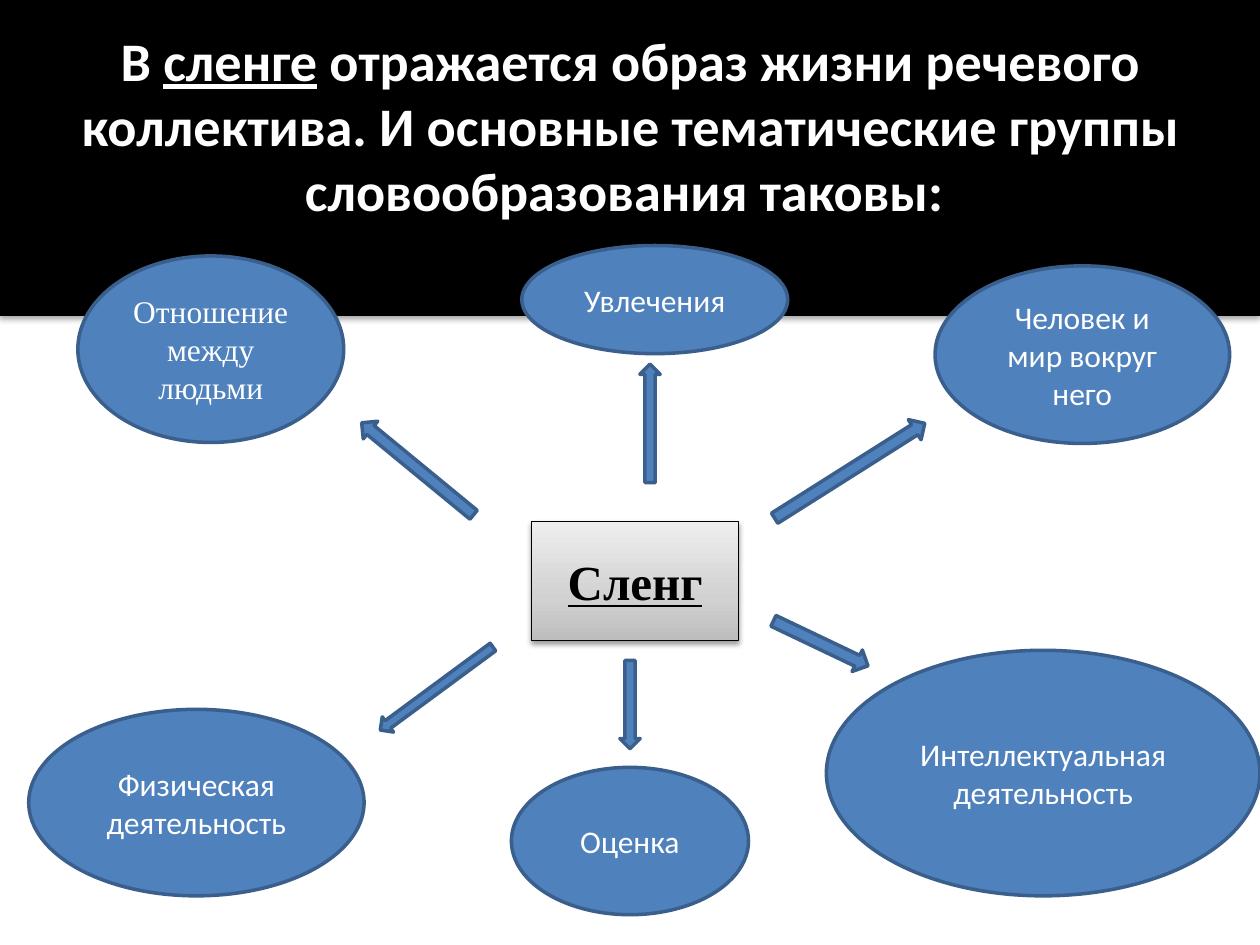
from lxml.etree import SubElement
from pptx import Presentation
from pptx.dml.color import RGBColor
from pptx.enum.shapes import MSO_SHAPE
from pptx.enum.text import MSO_ANCHOR, PP_ALIGN
from pptx.oxml.ns import qn
from pptx.util import Cm, Pt

SANS, SERIF = "Calibri", "Times New Roman"
BLUE, EDGE, BLACK, WHITE = "4F81BD", "3A5F8C", "000000", "FFFFFF"

# Ellipses: text, font, box within the diagram (cm)
TOPICS = [
    ("Увлечения", SANS, (10.52, 0, 5.36, 2.18)),
    ("Человек и мир вокруг него", SANS, (18.85, 0.41, 5.94, 3.58)),
    ("Интеллектуальная деятельность", SANS, (16.66, 8.16, 8.74, 4.95)),
    ("Оценка", SANS, (10.31, 10.52, 4.78, 2.97)),
    ("Физическая деятельность", SANS, (0.58, 9.35, 6.76, 3.76)),
    ("Отношение между людьми", SERIF, (1.57, 0.21, 5.36, 3.76)),
]
# Arrows: box before turning (cm), angle
ARROWS = [
    ((11.91, 3.38, 2.39, 0.41), 270),
    ((6.96, 4.27, 2.92, 0.46), 219.4),
    ((7.39, 8.74, 2.82, 0.38), 143.6),
    ((15.34, 4.3, 3.58, 0.48), 327.7),
    ((15.49, 7.78, 2.11, 0.48), 25.5),
    ((11.81, 9.05, 1.78, 0.41), 90),
]
HUB = (10.72, 5.57, 4.17, 2.39)


def color(code):
    return RGBColor.from_string(code)


def add_part(slide, kind, box, fill=BLUE, edge=EDGE, width=2):
    part = slide.shapes.add_shape(kind, *map(Cm, box))
    part.shadow.inherit = False
    part.fill.solid()
    part.fill.fore_color.rgb = color(fill)
    part.line.color.rgb = color(edge)
    part.line.width = Pt(width)
    return part


def write(part, runs, font, size, ink, bold=False):
    """Fill a shape with centred text; runs are (text, underlined) pairs."""
    frame = part.text_frame
    frame.word_wrap = True
    frame.vertical_anchor = MSO_ANCHOR.MIDDLE
    para = frame.paragraphs[0]
    para.alignment = PP_ALIGN.CENTER
    para.font.name, para.font.size, para.font.bold = font, Pt(size), bold
    para.font.color.rgb = color(ink)
    for text, under in runs:
        run = para.add_run()
        run.text = text
        if under:
            run.font.underline = True


def add_shade(part, alpha, dist):
    """Soft black shadow straight below the shape."""
    effects = part.element.spPr.find(qn("a:effectLst"))
    shade = SubElement(effects, qn("a:outerShdw"), blurRad=str(Pt(3.1)),
                       dist=str(Pt(dist)), dir="5400000", rotWithShape="0")
    tint = SubElement(shade, qn("a:srgbClr"), val=BLACK)
    SubElement(tint, qn("a:alpha"), val=str(alpha * 1000))


def add_blend(part, stops):
    """Upward gradient through (percent, colour) stops."""
    part.fill.gradient()
    part.fill.gradient_angle = 90
    items = part.element.spPr.find(".//" + qn("a:gsLst"))
    items.clear()
    for place, code in stops:
        stop = SubElement(items, qn("a:gs"), pos=str(place * 1000))
        SubElement(stop, qn("a:srgbClr"), val=code)


def add_title(slide, box):
    band = add_part(slide, MSO_SHAPE.RECTANGLE, box, BLACK, BLACK, 0.75)
    add_shade(band, 35, 1.8)
    band.text_frame.margin_bottom = Cm(1.45)
    write(band, [
        ("В ", False),
        ("сленге", True),
        (" отражается образ жизни речевого коллектива. И основные "
         "тематические группы словообразования таковы: ", False),
    ], SANS, 31, WHITE, True)


def add_diagram(slide, left, top):
    def place(box):
        return left + box[0], top + box[1], box[2], box[3]

    # Central term
    hub = add_part(slide, MSO_SHAPE.RECTANGLE, place(HUB), WHITE, BLACK, 0.75)
    add_blend(hub, [(0, "BDBDBD"), (35, "D1D1D1"), (100, "EEEEEE")])
    add_shade(hub, 38, 1.6)
    write(hub, [("Сленг", True)], SERIF, 28, BLACK, True)

    # Topics around it
    for text, font, box in TOPICS:
        topic = add_part(slide, MSO_SHAPE.OVAL, place(box))
        write(topic, [(text, False)], font, 18, WHITE)

    # Arrows pointing outwards
    for box, angle in ARROWS:
        add_part(slide, MSO_SHAPE.RIGHT_ARROW, place(box)).rotation = angle


def main():
    deck = Presentation()
    deck.slide_width, deck.slide_height = Cm(25.4), Cm(19.05)
    slide = deck.slides.add_slide(deck.slide_layouts[6])
    add_title(slide, (0, 0, 25.4, 6.35))
    add_diagram(slide, 0, 4.95)
    deck.save("out.pptx")


if __name__ == "__main__":
    main()
